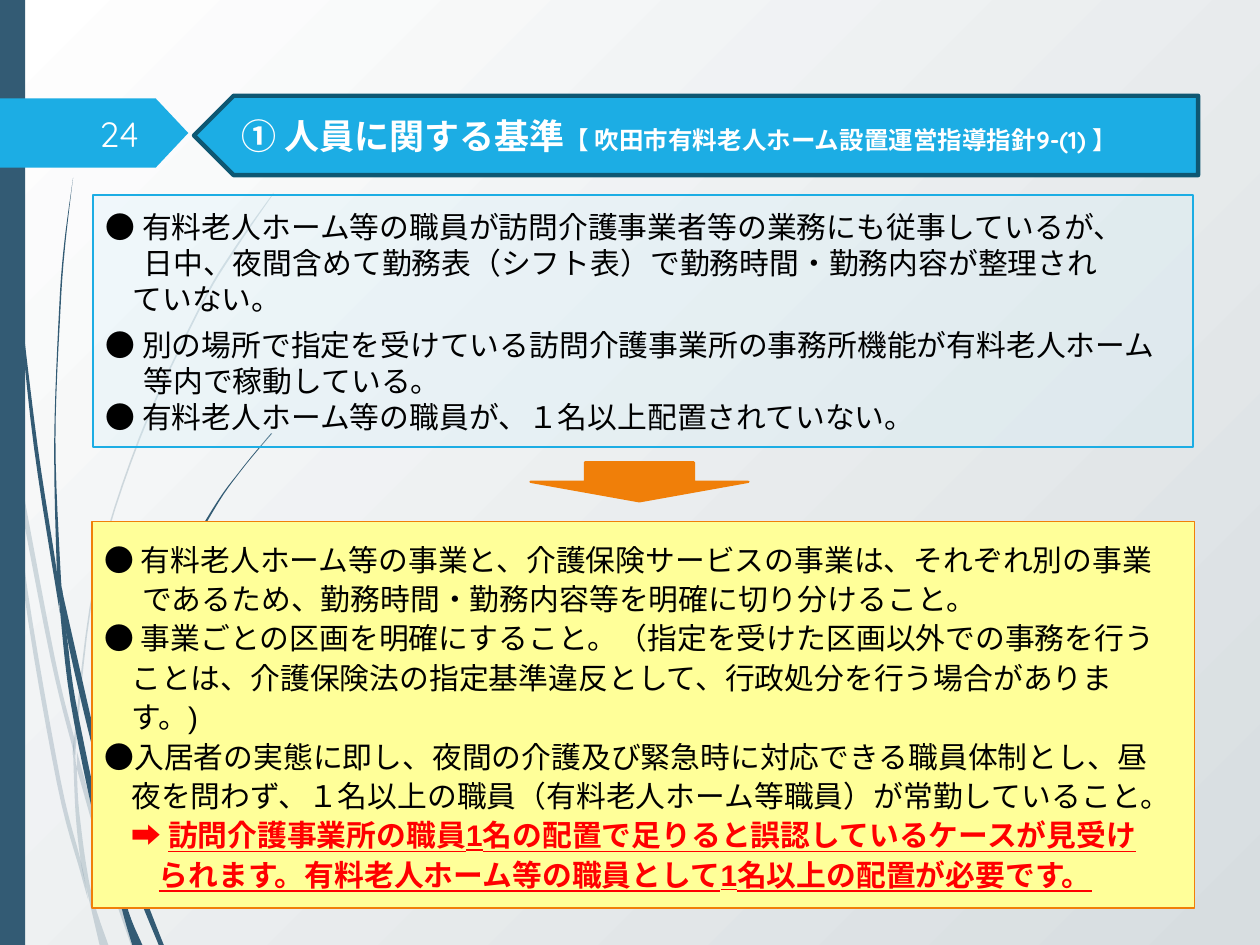
"""Build the slide on staffing standards for care homes."""
from dataclasses import dataclass

from lxml import etree
from pptx import Presentation
from pptx.dml.color import RGBColor
from pptx.enum import shapes, text
from pptx.oxml import ns
from pptx.util import Pt


@dataclass(frozen=True)
class Theme:
    navy: str = "335B74"
    blue: str = "1CADE4"
    deep: str = "0E5772"
    pale: str = "D2EFFA"
    yellow: str = "FFFF99"
    orange: str = "F07F09"
    red: str = "FF0000"
    black: str = "000000"
    white: str = "FFFFFF"
    grey: str = "D7DDE0"
    heading: str = "Quicksand"
    japanese: str = "Noto Sans CJK JP"
    latin: str = "Arial"
    title: int = 20
    reference: int = 14
    body: int = 17


T = Theme()
SHAPE = shapes.MSO_SHAPE
WIDE, NARROW, DEEP = 21.7, 15.4, 31

PALE_STRANDS = [
    ([(7.2, 248.4), (31, 374.4), (42.5, 421.9)],
     [(7.2, 255.6), (8.6, 270.7), (28.8, 375.8), (42.5, 431.3)]),
    ([(43.9, 429.1), (46.1, 437), (63.4, 498.2), (77.8, 540)],
     [(43.9, 439.2), (61.2, 499.7), (74.9, 540)]),
    ([(43.9, 439.2), (45.4, 465.1), (51.8, 508.3), (61.9, 540)],
     [(41.8, 431.3), (43.2, 465.1), (46.1, 491.8), (49.7, 509), (56.9, 540)]),
    ([(5.8, 252), (8.6, 270.7), (15.8, 337.7), (34.6, 445.7), (46.1, 491.8), (50.4, 514.1)],
     [(5.8, 252), (13.7, 338.4), (32.4, 447.1), (46.1, 499), (50.4, 514.1)]),
    ([(156.2, 110.2), (133.9, 141.8), (113.8, 175.7), (79.2, 250.6), (54, 331.9),
      (42.5, 420.5), (41.8, 431.3)],
     [(156.2, 110.9), (134.6, 142.6), (114.5, 176.4), (79.9, 251.3), (54.7, 332.6),
      (43.9, 420.5), (43.9, 439.2)]),
]
DARK_STRANDS = [
    ([(10.8, 167), (21.6, 255.6), (32.4, 326.2), (33.8, 346.3)],
     [(10.1, 167.8), (19.4, 255.6), (33.1, 343.4), (33.8, 346.3)]),
    ([(36, 339.8), (55.4, 424.8), (63.4, 454.3), (63.4, 464.4)],
     [(36, 339.8), (38.2, 363.6), (52.6, 426.2), (63.4, 464.4)]),
    ([(65.5, 461.5), (67.7, 467.3), (81.4, 508.3), (93.6, 540)],
     [(65.5, 472.3), (78.5, 509.8), (90.7, 540)]),
    ([(33.8, 343.4), (38.2, 363.6), (43.2, 400.3), (58.3, 473), (65.5, 497.5), (69.8, 519.8)],
     [(33.8, 343.4), (40.3, 401), (55.4, 474.5), (66.2, 509.8), (69.8, 519.8)]),
    ([(41.8, 101.5), (37.4, 139), (34.6, 176.4), (31.7, 251.3), (34.6, 326.2),
      (36, 339.8), (38.2, 363.6)],
     [(41.8, 101.5), (36.7, 139), (33.8, 176.4), (31, 251.3), (32.4, 323.3),
      (33.8, 343.4), (38.2, 363.6)]),
    ([(155.5, 247.7), (137.5, 269.3), (121.7, 292.3), (94.3, 342.7), (74.2, 397.4), (65.5, 455.8),
      (65.5, 461.5)],
     [(154.8, 247.7), (137.5, 268.6), (121, 291.6), (92.9, 341.3), (72.7, 396.7), (63.4, 454.3)]),
    ([(65.5, 461.5), (65.5, 472.3), (72, 515.5), (81.4, 540)],
     [(63.4, 454.3), (63.4, 464.4), (65.5, 497.5), (69.8, 519.8), (75.6, 540)]),
]

ISSUES = [
    (0, 0, "● 有料老人ホーム等の職員が訪問介護事業者等の業務にも従事しているが、"),
    (WIDE, 0, "日中、夜間含めて勤務表（シフト表）で勤務時間・勤務内容が整理され"),
    (NARROW, 6, "ていない。"),
    (0, 0, "● 別の場所で指定を受けている訪問介護事業所の事務所機能が有料老人ホーム"),
    (WIDE, 0, "等内で稼動している。"),
    (0, 0, "● 有料老人ホーム等の職員が、１名以上配置されていない。"),
]
REMEDIES = [
    (0, 0, "● 有料老人ホーム等の事業と、介護保険サービスの事業は、それぞれ別の事業"),
    (WIDE, 0, "であるため、勤務時間・勤務内容等を明確に切り分けること。"),
    (0, 0, "● 事業ごとの区画を明確にすること。（指定を受けた区画以外での事務を行う"),
    (NARROW, 0, "ことは、介護保険法の指定基準違反として、行政処分を行う場合がありま"),
    (NARROW, 0, "す。)"),
    (0, 0, "●入居者の実態に即し、夜間の介護及び緊急時に対応できる職員体制とし、昼"),
    (NARROW, 0, "夜を問わず、１名以上の職員（有料老人ホーム等職員）が常勤していること。"),
]
WARNINGS = [
    (NARROW, ["➡ ", "訪問介護事業所の職員1名の配置で足りると誤認しているケースが見受け"]),
    (DEEP, ["られます。有料老人ホーム等の職員として1名以上の配置が必要です。"]),
]


def rgb(c):
    return RGBColor.from_string(c)


def paint(sp, fill, line=None, width=1, opacity=None):
    sp.shadow.inherit = False
    sp.fill.solid()
    sp.fill.fore_color.rgb = rgb(fill)
    if opacity:
        clr = sp._element.spPr.find(".//" + ns.qn("a:srgbClr"))
        etree.SubElement(clr, ns.qn("a:alpha")).set("val", str(opacity * 1000))
    if line:
        sp.line.color.rgb = rgb(line)
        sp.line.width = Pt(width)
    else:
        sp.line.fill.background()


def add_box(s, kind, box, fill, **style):
    sp = s.shapes.add_shape(kind, *map(Pt, box))
    paint(sp, fill, **style)
    tf = sp.text_frame
    tf.word_wrap = True
    tf.vertical_anchor = text.MSO_ANCHOR.MIDDLE
    return sp


def smooth(pts, steps=6):
    ends = [pts[0], *pts, pts[-1]]
    curve = [pts[0]]
    for a, b, c, d in zip(ends, ends[1:], ends[2:], ends[3:]):
        for t in (i / steps for i in range(1, steps + 1)):
            curve.append(tuple(
                (2 * q + (r - p) * t + (2 * p - 5 * q + 4 * r - u) * t ** 2
                 + (3 * q - p - 3 * r + u) * t ** 3) / 2
                for p, q, r, u in zip(a, b, c, d)))
    return curve


def add_strand(s, right, left, opacity=None):
    outline = [(Pt(x), Pt(y)) for x, y in smooth(right) + smooth(left)[::-1]]
    builder = s.shapes.build_freeform(*outline[0])
    builder.add_line_segments(outline[1:])
    paint(builder.convert_to_shape(), T.navy, opacity=opacity)


def add_paragraph(tf, runs, font, size, color, indent=0, bold=False):
    p = tf.paragraphs[0] if not tf.paragraphs[0].runs else tf.add_paragraph()
    p.alignment = text.PP_ALIGN.LEFT
    p._p.get_or_add_pPr().set("marL", str(Pt(indent)))
    p.font.name, p.font.size, p.font.bold = font, Pt(size), bold
    p.font.color.rgb = rgb(color)
    for words in runs:
        r = p.add_run()
        r.text = words
        rPr = r._r.get_or_add_rPr()
        rPr.set("lang", "ja-JP")
        etree.SubElement(rPr, ns.qn("a:ea")).set("typeface", T.japanese)
    return p


def add_lines(tf, lines, font, pitch):
    for indent, after, words in lines:
        p = add_paragraph(tf, [words], font, T.body, T.black, indent)
        p.line_spacing, p.space_after = Pt(pitch), Pt(after)


def add_warnings(tf, pitch):
    for indent, runs in WARNINGS:
        p = add_paragraph(tf, runs, T.latin, T.body, T.red, indent, True)
        p.line_spacing = Pt(pitch)
        p.runs[-1].font.underline = True


def add_background(s):
    fill = s.background.fill
    fill.gradient()
    fill.gradient_angle = 315
    for stop, color, at in zip(fill.gradient_stops, (T.white, T.grey), (0, 1)):
        stop.color.rgb, stop.position = rgb(color), at
    for strand in PALE_STRANDS:
        add_strand(s, *strand, opacity=20)
    for strand in DARK_STRANDS:
        add_strand(s, *strand)
    add_box(s, SHAPE.RECTANGLE, (0, 0, 14.4, 540), T.navy)


def add_page_tag(s):
    tag = add_box(s, SHAPE.PENTAGON, (0, 56.2, 107.6, 39.6), T.blue)
    tag.adjustments[0] = 0.47
    tf = s.shapes.add_textbox(*map(Pt, (40.3, 61.9, 46.1, 28.8))).text_frame
    tf.word_wrap = True
    tf.vertical_anchor = text.MSO_ANCHOR.MIDDLE
    p = add_paragraph(tf, ["24"], T.heading, T.title, T.white)
    p.alignment = text.PP_ALIGN.RIGHT


def add_title(s):
    sp = add_box(s, SHAPE.PENTAGON, (110.9, 54.7, 573.8, 45.4), T.blue, line=T.deep, width=2.5)
    sp._element.spPr.xfrm.set("flipH", "1")
    runs = ["① 人員に関する基準", "【 吹田市有料老人ホーム設置運営指導指針9-(1) 】"]
    p = add_paragraph(sp.text_frame, runs, T.heading, T.title, T.white, 8.5, True)
    p.space_before = Pt(6)
    p.runs[1].font.size = Pt(T.reference)


def main():
    prs = Presentation()
    prs.slide_width, prs.slide_height = Pt(720), Pt(540)
    s = prs.slides.add_slide(prs.slide_layouts[6])
    add_background(s)
    add_page_tag(s)
    remedy = add_box(s, SHAPE.RECTANGLE, (52.6, 298.1, 630, 221), T.yellow, line=T.orange)
    add_lines(remedy.text_frame, REMEDIES, T.latin, 22.5)
    add_warnings(remedy.text_frame, 22.5)
    add_box(s, SHAPE.DOWN_ARROW, (303.1, 264.2, 124.6, 22.3), T.orange, line=T.orange, width=1.25)
    add_title(s)
    issue = add_box(s, SHAPE.RECTANGLE, (53.3, 111.6, 628.6, 144), T.pale, line=T.blue, opacity=25)
    add_lines(issue.text_frame, ISSUES, T.japanese, 20.5)
    prs.save("out.pptx")


if __name__ == "__main__":
    main()
